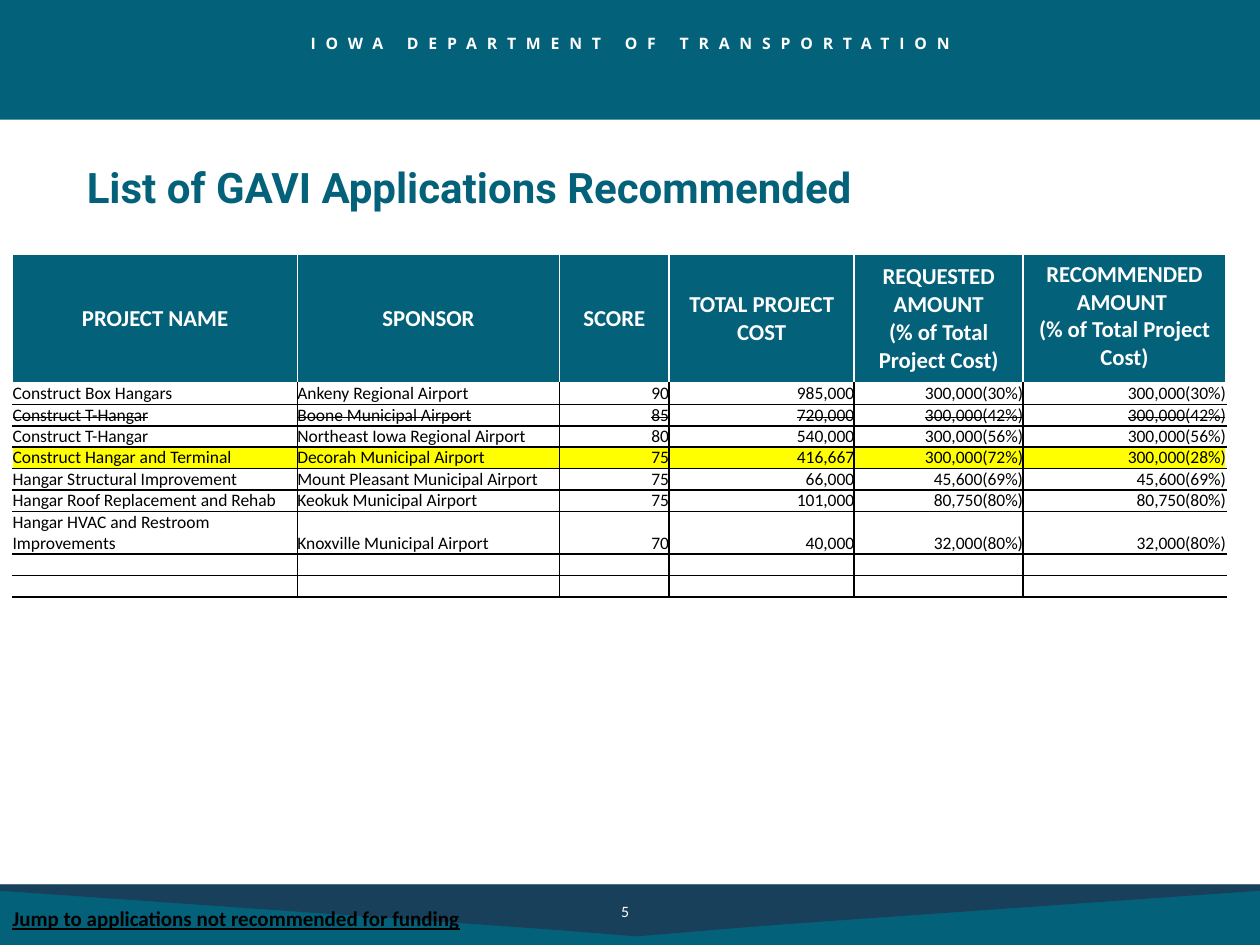
from lxml import etree
from pptx import Presentation
from pptx.dml.color import RGBColor
from pptx.enum import shapes, text
from pptx.oxml import ns
from pptx.util import Inches, Pt

HUE = {"teal": "03617A", "navy": "19405B", "white": "FFFFFF", "black": "000000", "mark": "FFFF00"}
COLS = [2.26, 2.08, 0.87, 1.47, 1.34, 1.61]
HEAD = ["PROJECT NAME", "SPONSOR", "SCORE", "TOTAL PROJECT COST",
        "REQUESTED AMOUNT\n(% of Total Project Cost)",
        "RECOMMENDED AMOUNT \n(% of Total Project Cost)"]
ROWS = [
    ["Construct Box Hangars", "Ankeny Regional Airport", "90", "985,000", "300,000(30%)", "300,000(30%)"],
    ["Construct T-Hangar", "Boone Municipal Airport", "85", "720,000", "300,000(42%)", "300,000(42%)"],
    ["Construct T-Hangar", "Northeast Iowa Regional Airport", "80", "540,000", "300,000(56%)", "300,000(56%)"],
    ["Construct Hangar and Terminal", "Decorah Municipal Airport", "75", "416,667", "300,000(72%)", "300,000(28%)"],
    ["Hangar Structural Improvement", "Mount Pleasant Municipal Airport", "75", "66,000", "45,600(69%)", "45,600(69%)"],
    ["Hangar Roof Replacement and Rehab", "Keokuk Municipal Airport", "75", "101,000", "80,750(80%)", "80,750(80%)"],
    ["Hangar HVAC and Restroom Improvements", "Knoxville Municipal Airport", "70", "40,000", "32,000(80%)", "32,000(80%)"],
    [""] * 6,
    [""] * 6,
]
STRUCK, MARKED, TALL = 2, 4, 7
ALIGN = text.PP_ALIGN
ANCHOR = text.MSO_ANCHOR


def tone(name):
    """Return the named colour."""
    return RGBColor.from_string(HUE[name])


def write(para, words, size, hue, face="Calibri", bold=False, align=None):
    """Add one styled run to a paragraph and return it."""
    para.alignment = align
    run = para.add_run()
    run.text = words
    font = run.font
    font.size, font.name, font.bold = Pt(size), face, bold
    font.color.rgb = tone(hue)
    return run


def label(slide, box, words, size, hue, **style):
    """Place a wrapped text box and return its frame and run."""
    frame = slide.shapes.add_textbox(*map(Inches, box)).text_frame
    frame.word_wrap = True
    return frame, write(frame.paragraphs[0], words, size, hue, **style)


def paint(shape, hue):
    """Give a shape a plain fill without line or shadow."""
    shape.shadow.inherit = False
    shape.fill.solid()
    shape.fill.fore_color.rgb = tone(hue)
    shape.line.fill.background()
    return shape


def band(slide, box):
    """Draw a teal bar."""
    paint(slide.shapes.add_shape(shapes.MSO_SHAPE.RECTANGLE, *map(Inches, box)), "teal")


def wedge(slide, box):
    """Draw a navy wedge that points down."""
    x, y, w, h = box
    dots = [(x + w, y), (x + w, y + 0.05), (x + w / 2 + 0.03, y + h),
            (x + w / 2 - 0.02, y + h), (x, y + 0.05)]
    pen = slide.shapes.build_freeform(Inches(x), Inches(y))
    pen.add_line_segments([(Inches(a), Inches(b)) for a, b in dots])
    return paint(pen.convert_to_shape(), "navy")


def header(slide, box):
    """Draw the top bar with the spaced agency name."""
    x, y, w, h = box
    band(slide, box)
    run = label(slide, (x, y + 0.22, w, 0.25), "IOWA DEPARTMENT OF TRANSPORTATION",
                9, "white", face="Open Sans", bold=True, align=ALIGN.CENTER)[1]
    run._r.get_or_add_rPr().set("spc", "560")


def footer(slide, box):
    """Draw the bottom bar with wedges, page number and jump line."""
    x, y, w, h = box
    band(slide, box)
    wedge(slide, (x, y, w, 0.4))
    frame = wedge(slide, (x + 0.83, y + 0.01, 8.43, 0.4)).text_frame
    frame.margin_left = Inches(4.1)
    frame.vertical_anchor = ANCHOR.MIDDLE
    write(frame.paragraphs[0], "5", 9, "white", align=ALIGN.LEFT)
    run = label(slide, (x, y + 0.12, 7.83, 0.3), "Jump to applications not recommended for funding",
                12, "black", bold=True)[1]
    run.font.underline = True


def title(slide, box):
    """Place the slide title."""
    frame, run = label(slide, box, "List of GAVI Applications Recommended",
                       24, "teal", face="Roboto", bold=True)
    frame.vertical_anchor = ANCHOR.MIDDLE
    frame.paragraphs[0].line_spacing = 0.9


def edge(cell, sides, hue):
    """Draw one-point borders on the given sides of a cell."""
    props = cell._tc.get_or_add_tcPr()
    for i, side in enumerate(sides):
        line = etree.Element(ns.qn("a:ln" + side), w=str(Pt(1)))
        fill = etree.SubElement(line, ns.qn("a:solidFill"))
        etree.SubElement(fill, ns.qn("a:srgbClr"), val=HUE[hue])
        props.insert(i, line)


def shade(cell, hue):
    """Fill a cell, or clear it when no colour is given."""
    if hue:
        cell.fill.solid()
        cell.fill.fore_color.rgb = tone(hue)
    else:
        cell.fill.background()


def top_cell(cell, words, col):
    """Fill a heading cell."""
    cell.vertical_anchor = ANCHOR.TOP if col == len(COLS) - 1 else ANCHOR.MIDDLE
    shade(cell, "teal")
    edge(cell, "LRT", "white")
    frame = cell.text_frame
    for i, part in enumerate(words.split("\n")):
        para = frame.add_paragraph() if i else frame.paragraphs[0]
        write(para, part, 13, "white", bold=True, align=ALIGN.CENTER)


def body_cell(cell, words, row, col):
    """Fill a data cell."""
    cell.margin_left = cell.margin_right = cell.margin_top = cell.margin_bottom = 0
    cell.vertical_anchor = ANCHOR.BOTTOM
    shade(cell, "mark" if row == MARKED else None)
    sides = ("L" if col else "") + ("R" if col < len(COLS) - 1 else "")
    edge(cell, sides + ("T" if row > 1 else "") + "B", "black")
    para = cell.text_frame.paragraphs[0]
    if not words:
        etree.SubElement(para._p, ns.qn("a:endParaRPr"), sz="1000")
        return
    run = write(para, words, 10, "black", align=ALIGN.RIGHT if col > 1 else ALIGN.LEFT)
    if row == STRUCK:
        run._r.get_or_add_rPr().set("strike", "sngStrike")


def grid(slide, box):
    """Build the table of applications."""
    table = slide.shapes.add_table(len(ROWS) + 1, len(COLS), *map(Inches, box)).table
    table.first_row = table.horz_banding = False
    for col, wide in enumerate(COLS):
        table.columns[col].width = Inches(wide)
        top_cell(table.cell(0, col), HEAD[col], col)
    table.rows[0].height = Inches(1.02)
    for row, line in enumerate(ROWS, 1):
        table.rows[row].height = Inches(0.34 if row == TALL else 0.17)
        for col, words in enumerate(line):
            body_cell(table.cell(row, col), words, row, col)


def main():
    """Build and save the slide."""
    deck = Presentation()
    deck.slide_width, deck.slide_height = Inches(10), Inches(7.5)
    slide = deck.slides.add_slide(deck.slide_layouts[6])
    header(slide, (0, 0, 10, 0.95))
    footer(slide, (0, 7.02, 10, 0.48))
    title(slide, (0.59, 1.31, 8.62, 0.39))
    grid(slide, (0.1, 2.02, 9.63, 2.71))
    deck.save("out.pptx")


if __name__ == "__main__":
    main()
